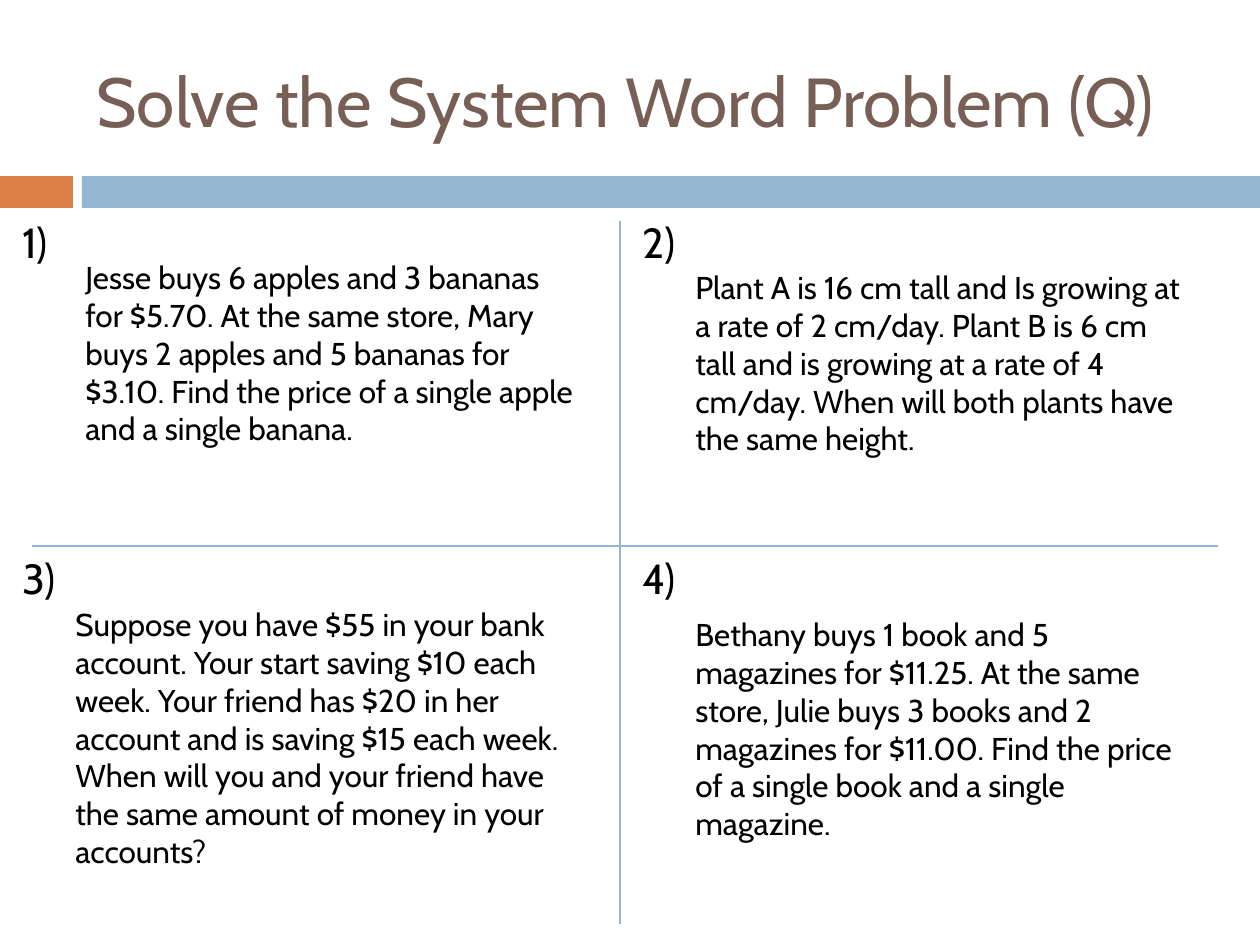
from typing import NamedTuple

from lxml import etree
from pptx import Presentation
from pptx import util as u
from pptx.dml.color import RGBColor
from pptx.enum import shapes, text
from pptx.oxml.ns import qn

PX = 914400 / 126
FONT = "Cabin"
COLORS = {"orange": "DD8047", "blue": "94B6D2", "brown": "775F55", "black": "000000"}


class Box(NamedTuple):
    left: int
    top: int
    width: int
    height: int


class Problem(NamedTuple):
    number: str
    number_at: tuple[int, int]
    question: str
    question_box: Box


COLUMNS = (10, 630)
ROWS = (210, 546)
PROBLEMS = [
    Problem("1)", (COLUMNS[0], ROWS[0]),
            "Jesse buys 6 apples and 3 bananas for $5.70. At the same store, Mary buys "
            "2 apples and 5 bananas for $3.10. Find the price of a single apple and a "
            "single banana.", Box(73, 252, 514, 204)),
    Problem("2)", (COLUMNS[1], ROWS[0]),
            "Plant A is 16 cm tall and Is growing at a rate of 2 cm/day. Plant B is 6 cm "
            "tall and is growing at a rate of 4 cm/day. When will both plants have the "
            "same height.", Box(683, 262, 514, 204)),
    Problem("3)", (COLUMNS[0], ROWS[1]),
            "Suppose you have $55 in your bank account. Your start saving $10 each week. "
            "Your friend has $20 in her account and is saving $15 each week. When will "
            "you and your friend have the same amount of money in your accounts?",
            Box(63, 599, 514, 280)),
    Problem("4)", (COLUMNS[1], ROWS[1]),
            "Bethany buys 1 book and 5 magazines for $11.25. At the same store, Julie "
            "buys 3 books and 2 magazines for $11.00. Find the price of a single book "
            "and a single magazine.", Box(683, 609, 514, 204)),
]


def emu(px: int) -> int:
    return round(px * PX)


def color(name: str) -> RGBColor:
    return RGBColor.from_string(COLORS[name])


def add_bar(slide, box: Box, fill: str) -> None:
    bar = slide.shapes.add_shape(shapes.MSO_SHAPE.RECTANGLE, *map(emu, box))
    bar.shadow.inherit = False
    bar.fill.solid()
    bar.fill.fore_color.rgb = color(fill)
    bar.line.fill.background()


def add_divider(slide, start: tuple[int, int], end: tuple[int, int]) -> None:
    divider = slide.shapes.add_connector(
        shapes.MSO_CONNECTOR.STRAIGHT, *map(emu, start + end))
    divider.line.color.rgb = color("blue")
    divider.line.width = u.Pt(0.79)
    etree.SubElement(divider._element.spPr, qn("a:effectLst"))


def write(frame, words: str, size: float, ink: str) -> None:
    """Put one formatted, left-aligned run into the frame's first paragraph."""
    frame.word_wrap = True
    paragraph = frame.paragraphs[0]
    paragraph.alignment = text.PP_ALIGN.LEFT
    run = paragraph.add_run()
    run.text = words
    run.font.name = FONT
    run.font.size = u.Pt(size)
    run.font.color.rgb = color(ink)


def add_text(slide, box: Box, words: str, size: float) -> None:
    frame = slide.shapes.add_textbox(*map(emu, box)).text_frame
    frame.auto_size = text.MSO_AUTO_SIZE.SHAPE_TO_FIT_TEXT
    write(frame, words, size, "black")


def add_title(slide, box: Box, words: str) -> None:
    title = slide.shapes.title
    title.left, title.top, title.width, title.height = map(emu, box)
    title.text_frame.vertical_anchor = text.MSO_ANCHOR.MIDDLE
    title.text_frame.auto_size = text.MSO_AUTO_SIZE.NONE
    write(title.text_frame, words, 39.6, "brown")


def main() -> None:
    deck = Presentation()
    deck.slide_width, deck.slide_height = emu(1260), emu(945)
    slide = deck.slides.add_slide(deck.slide_layouts.get_by_name("Title Only"))

    add_bar(slide, Box(0, 176, 73, 32), "orange")
    add_bar(slide, Box(82, 176, 1178, 32), "blue")
    add_title(slide, Box(84, 32, 1124, 136), "Solve the System Word Problem (Q)")
    add_divider(slide, (620, 221), (620, 924))
    add_divider(slide, (32, 546), (1218, 546))
    for problem in PROBLEMS:
        add_text(slide, Box(*problem.number_at, 63, 63), problem.number, 24)
        add_text(slide, problem.question_box, problem.question, 18)

    deck.save("out.pptx")


if __name__ == "__main__":
    main()
